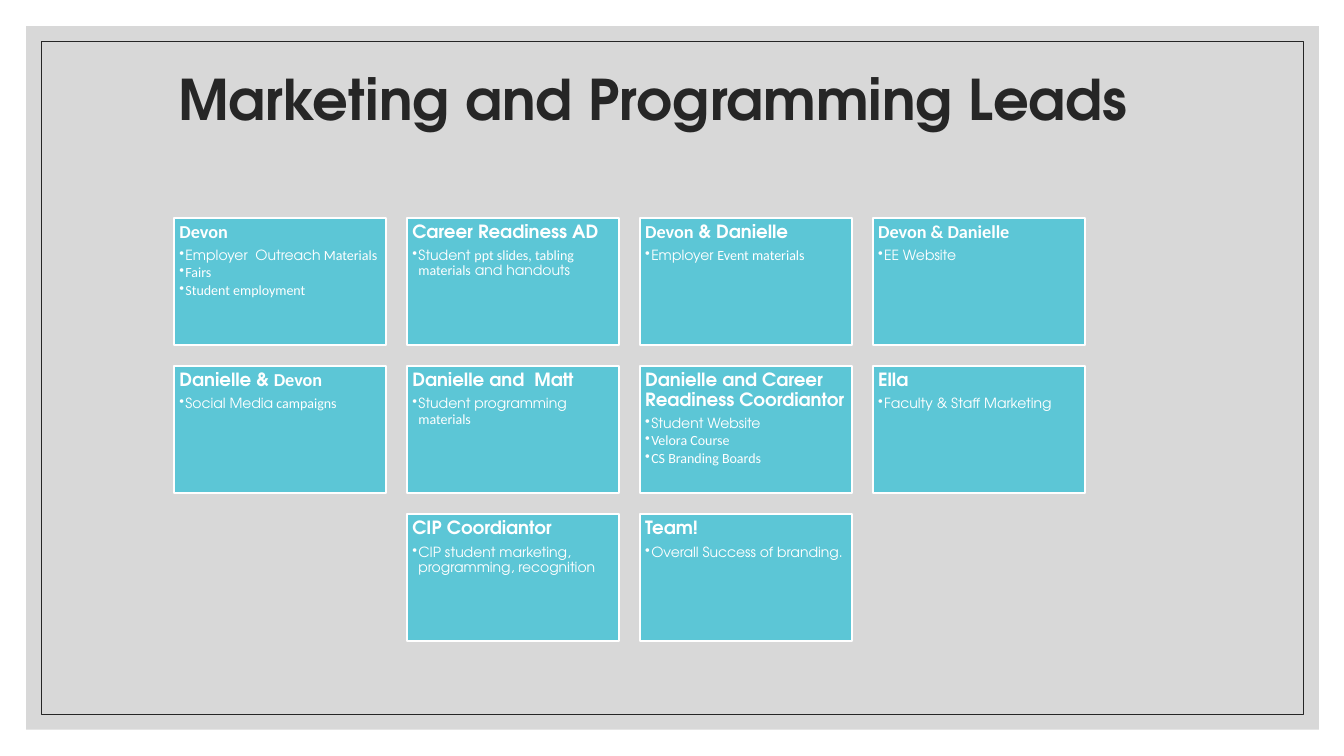
from lxml import etree
from pptx import Presentation
from pptx import util as u
from pptx.dml.color import RGBColor
from pptx.enum import shapes, text
from pptx.oxml.ns import qn

WHITE = RGBColor(0xFF, 0xFF, 0xFF)
INK = RGBColor(0x26, 0x26, 0x26)
GREY = RGBColor(0xBF, 0xBF, 0xBF)
TEAL = RGBColor(0x5C, 0xC6, 0xD6)
MAIN_FONT = "TeX Gyre Adventor"
SECOND_FONT = "Calibri"

COLUMNS = 4
CARD_WIDTH, CARD_HEIGHT, GAP = 2.1, 1.26, 0.21

CARDS = [
    ("|Devon|", "Employer  Outreach| Materials|", "|Fairs|", "|Student employment|"),
    ("Career Readiness AD", "Student |ppt slides, tabling materials| and handouts"),
    ("|Devon| & Danielle", "Employer |Event materials|"),
    ("|Devon & Danielle|", "EE Website"),
    ("Danielle & |Devon|", "Social Media| campaigns|"),
    ("Danielle and  Matt", "Student programming| materials|"),
    ("Danielle and Career Readiness Coordiantor", "Student Website",
     "|Velora Course|", "|CS Branding Boards|"),
    ("Ella", "Faculty & Staff Marketing"),
    ("CIP Coordiantor", "CIP student marketing, programming, recognition"),
    ("Team!", "Overall Success of branding."),
]


def add_rectangle(page, left, top, width, height):
    """Add a shadowless rectangle placed in inches."""
    box = page.shapes.add_shape(
        shapes.MSO_SHAPE.RECTANGLE, *map(u.Inches, (left, top, width, height)))
    box.shadow.inherit = False
    return box


def add_background(page, left, top, width, height):
    """Draw the translucent grey panel and the thin frame inside it."""
    panel = add_rectangle(page, left, top, width, height)
    panel.fill.solid()
    panel.fill.fore_color.rgb = GREY
    panel.line.fill.background()
    color = panel._element.spPr.find(".//" + qn("a:srgbClr"))
    etree.SubElement(color, qn("a:alpha"), val="60000")

    inset = 0.15
    frame = add_rectangle(page, left + inset, top + inset,
                          width - 2 * inset, height - 2 * inset)
    frame.fill.background()
    frame.line.color.rgb = INK
    frame.line.width = u.Pt(0.5)


def add_title(page, left, top, width, height):
    """Write the centred slide title."""
    box = page.shapes.add_textbox(*map(u.Inches, (left, top, width, height)))
    box.text_frame.word_wrap = True
    para = box.text_frame.paragraphs[0]
    para.text = "Marketing and Programming Leads"
    para.alignment = text.PP_ALIGN.CENTER
    para.line_spacing = 0.9
    para.font.name = MAIN_FONT
    para.font.size = u.Pt(40)
    para.font.bold = True
    para.font.color.rgb = INK


def write_line(para, line, is_heading):
    """Write a heading or bullet; text between bars takes the second font."""
    para.alignment = text.PP_ALIGN.LEFT
    para.line_spacing = 0.9
    para.space_after = u.Pt(4.5 if is_heading else 1.5)
    para.font.size = u.Pt(13 if is_heading else 10)
    para.font.bold = is_heading
    para.font.color.rgb = WHITE
    if not is_heading:
        properties = para._p.get_or_add_pPr()
        indent = u.Inches(0.06)
        properties.set("marL", str(indent))
        properties.set("indent", str(-indent))
        bullet = etree.Element(qn("a:buChar"), char="•")
        properties.find(qn("a:defRPr")).addprevious(bullet)
    for index, piece in enumerate(line.split("|")):
        if piece:
            span = para.add_run()
            span.text = piece
            span.font.name = SECOND_FONT if index % 2 else MAIN_FONT
            span.font.color.rgb = WHITE


def add_card(page, left, top, width, height, lines):
    """Draw one teal card with its heading and bullets."""
    card = add_rectangle(page, left, top, width, height)
    card.fill.solid()
    card.fill.fore_color.rgb = TEAL
    card.line.color.rgb = WHITE
    card.line.width = u.Pt(1.5)
    frame = card.text_frame
    frame.word_wrap = True
    frame.vertical_anchor = text.MSO_ANCHOR.TOP
    frame.margin_left = frame.margin_right = u.Inches(0.05)
    frame.margin_top = frame.margin_bottom = u.Inches(0.05)
    for index, line in enumerate(lines):
        para = frame.add_paragraph() if index else frame.paragraphs[0]
        write_line(para, line, is_heading=index == 0)


def add_card_grid(page, left, top):
    """Lay the cards out in rows, centring a short last row."""
    for row, start in enumerate(range(0, len(CARDS), COLUMNS)):
        cards = CARDS[start:start + COLUMNS]
        shift = (COLUMNS - len(cards)) / 2
        for column, lines in enumerate(cards):
            add_card(page, left + (column + shift) * (CARD_WIDTH + GAP),
                     top + row * (CARD_HEIGHT + GAP),
                     CARD_WIDTH, CARD_HEIGHT, lines)


def main():
    """Build the deck and save it."""
    deck = Presentation()
    deck.slide_width, deck.slide_height = u.Inches(13.33), u.Inches(7.5)
    page = deck.slides.add_slide(deck.slide_layouts[6])
    add_background(page, 0.26, 0.26, 12.82, 6.98)
    add_title(page, 1.16, 0.67, 10.63, 1.64)
    add_card_grid(page, 1.73, 2.16)
    deck.save("out.pptx")


if __name__ == "__main__":
    main()
